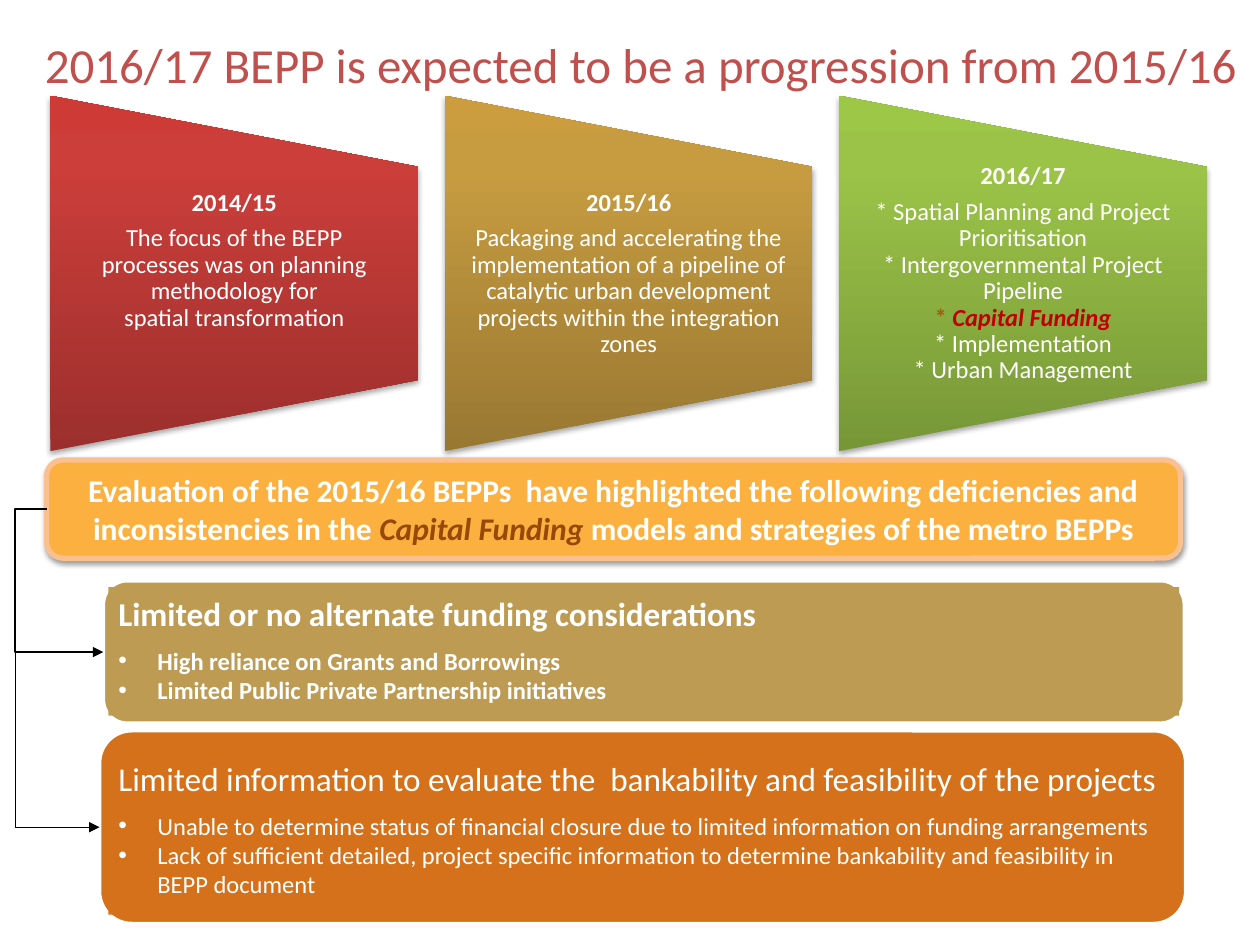
from lxml import etree
from pptx import Presentation
from pptx.dml import color
from pptx.enum import shapes, text
from pptx.oxml import ns
from pptx.util import Inches, Pt

WHITE = "FFFFFF"
HEADING = {"line_spacing": 0.9}
CARD = {"line_spacing": 0.9, "alignment": text.PP_ALIGN.CENTER}
CARD_LEFT, CARD_PITCH = 0.4, 3.13
SPINE = 0.12

CARDS = [
    (("9C2F2D", "CB3E3A", "CE3B37"), "2014/15",
     ["The focus of the BEPP\vprocesses was on planning methodology for\vspatial transformation"], 0.21),
    (("997832", "C79C41", "CB9D3F"), "2015/16",
     ["Packaging and accelerating the implementation of a pipeline of catalytic urban "
      "development projects within the integration zones"], 0),
    (("779737", "9BC348", "9DC746"), "2016/17",
     ["* Spatial Planning and Project Prioritisation",
      "* Intergovernmental Project Pipeline",
      [("* ", {"color": "A25C0A", "bold": True}),
       ("Capital Funding", {"color": "C00000", "bold": True, "italic": True})],
      "* Implementation",
      "* Urban Management"], 0),
]


def rgb(value):
    return color.RGBColor.from_string(value)


def set_values(target, values):
    for name, value in values.items():
        setattr(target, name, value)


def add_node(parent, tag, **attributes):
    return etree.SubElement(parent, ns.qn(tag), attributes)


def add_run(paragraph, words, size, color=WHITE, bold=False, italic=False):
    pieces = words.split("\v")
    for index, piece in enumerate(pieces):
        if index:
            paragraph.add_line_break()
        run = paragraph.add_run()
        run.text = piece
        set_values(run.font, {"name": "Calibri", "size": Pt(size), "bold": bold, "italic": italic})
        run.font.color.rgb = rgb(color)


def add_paragraph(frame, content, size, layout, bold=False):
    first = frame.paragraphs[0]
    paragraph = frame.add_paragraph() if first.runs else first
    set_values(paragraph, layout)
    runs = [(content, {"bold": bold})] if isinstance(content, str) else content
    for words, style in runs:
        add_run(paragraph, words, size, **style)
    return paragraph


def add_bullet(frame, words, bold):
    paragraph = add_paragraph(frame, words, 14, {"alignment": text.PP_ALIGN.LEFT}, bold)
    properties = paragraph._p.get_or_add_pPr()
    properties.set("marL", str(Inches(0.31)))
    properties.set("indent", str(Inches(-0.31)))
    add_node(properties, "a:buFont", typeface="Arial")
    add_node(properties, "a:buChar", char="•")


def format_frame(frame, left, top, right, bottom):
    set_values(frame, {
        "word_wrap": True, "auto_size": text.MSO_AUTO_SIZE.NONE,
        "vertical_anchor": text.MSO_ANCHOR.MIDDLE,
        "margin_left": Inches(left), "margin_top": Inches(top),
        "margin_right": Inches(right), "margin_bottom": Inches(bottom)})


def add_text_box(slide, box, insets):
    shape = slide.shapes.add_textbox(*map(Inches, box))
    format_frame(shape.text_frame, *insets)
    return shape


def add_shadow(shape, opacity, distance):
    effects = shape._element.spPr.find(ns.qn("a:effectLst"))
    shadow = add_node(effects, "a:outerShdw", blurRad=str(Pt(3.1)), dist=str(Pt(distance)),
                      dir="5400000", rotWithShape="0")
    add_node(add_node(shadow, "a:srgbClr", val="000000"), "a:alpha", val=str(opacity * 1000))


def add_rounded(slide, box, fill, line, width):
    shape = slide.shapes.add_shape(shapes.MSO_SHAPE.ROUNDED_RECTANGLE, *map(Inches, box))
    shape.shadow.inherit = False
    shape.fill.solid()
    shape.fill.fore_color.rgb = rgb(fill)
    shape.line.color.rgb = rgb(line)
    shape.line.width = Pt(width)
    return shape


def add_gradient(shape, colors):
    properties = shape._element.spPr
    gradient = etree.Element(ns.qn("a:gradFill"), rotWithShape="0")
    stops = add_node(gradient, "a:gsLst")
    for position, value in zip((0, 80, 100), colors):
        add_node(add_node(stops, "a:gs", pos=str(position * 1000)), "a:srgbClr", val=value)
    add_node(gradient, "a:lin", ang="16200000", scaled="0")
    properties.find(ns.qn("a:prstGeom")).addnext(gradient)


def add_card(slide, left, colors, year, lines, bottom):
    shape = slide.shapes.add_shape(
        shapes.MSO_SHAPE.FLOWCHART_MANUAL_OPERATION,
        Inches(left + 0.05), Inches(0.71), Inches(2.82), Inches(2.92))
    shape.rotation = 270
    shape.line.fill.background()
    shape.shadow.inherit = False
    add_gradient(shape, colors)
    add_shadow(shape, 35, 1.8)
    frame = add_text_box(slide, (left, 1.33, 2.92, 1.69), (0.1, 0, 0.1, bottom)).text_frame
    add_paragraph(frame, year, 14, {**CARD, "space_after": Pt(4.9)}, True)
    for line in lines:
        add_paragraph(frame, line, 14, CARD)


def add_title(slide, words):
    title = slide.shapes.title
    box = dict(zip(("left", "top", "width", "height"), map(Inches, (0.33, 0.25, 9.51, 0.51))))
    set_values(title, box)
    format_frame(title.text_frame, 0, 0, 0, 0)
    add_paragraph(title.text_frame, [(words, {"color": "C0504D"})], 28,
                  {"alignment": text.PP_ALIGN.CENTER})


def add_banner(slide):
    banner = add_rounded(slide, (0.37, 3.65, 9, 0.78), "FBB040", "FAC090", 3)
    add_shadow(banner, 38, 1.6)
    format_frame(banner.text_frame, 0.1, 0.05, 0.1, 0.05)
    add_paragraph(banner.text_frame, [
        ("Evaluation of the 2015/16 BEPPs  have highlighted the following deficiencies and "
         "inconsistencies in the ", {"bold": True}),
        ("Capital Funding ", {"color": "984807", "bold": True, "italic": True}),
        ("models and strategies of the metro BEPPs", {"bold": True}),
    ], 18, {"alignment": text.PP_ALIGN.CENTER})
    return banner


def add_finding(slide, box, text_box, fill, heading, bullets, bold):
    panel = add_rounded(slide, box, fill, WHITE, 2)
    label = add_text_box(slide, text_box, (0.08,) * 4)
    label.fill.solid()
    label.fill.fore_color.rgb = rgb(fill)
    add_paragraph(label.text_frame, heading, 19, {**HEADING, "space_after": Pt(6.65)}, bold)
    for bullet in bullets:
        add_bullet(label.text_frame, bullet, bold)
    return panel


def add_elbow(slide, source, target):
    connector = slide.shapes.add_connector(shapes.MSO_CONNECTOR.ELBOW, 0, 0, 0, 0)
    connector.begin_connect(source, 1)
    connector.end_connect(target, 1)
    connector.line.color.rgb = rgb("000000")
    connector.line.width = Pt(0.75)
    properties = connector._element.spPr
    ratio = (Inches(SPINE) - source.left) / (target.left - source.left)
    guides = properties.find(ns.qn("a:prstGeom")).find(ns.qn("a:avLst"))
    add_node(guides, "a:gd", name="adj1", fmla=f"val {round(ratio * 100000)}")
    add_node(properties.find(ns.qn("a:ln")), "a:tailEnd", type="triangle")
    add_node(properties, "a:effectLst")


def main():
    presentation = Presentation()
    presentation.slide_width, presentation.slide_height = Inches(10), Inches(7.5)
    slide = presentation.slides.add_slide(presentation.slide_layouts[5])
    for index, card in enumerate(CARDS):
        add_card(slide, CARD_LEFT + index * CARD_PITCH, *card)
    add_title(slide, "2016/17 BEPP is expected to be a progression from 2015/16")
    banner = add_banner(slide)
    funding = add_finding(
        slide, (0.82, 4.61, 8.58, 1.13), (0.86, 4.66, 8.5, 1.02), "BD9B53",
        "Limited or no alternate funding considerations",
        ["High reliance on Grants and Borrowings",
         "Limited Public Private Partnership initiatives"], True)
    bankability = add_finding(
        slide, (0.79, 5.8, 8.62, 1.53), (0.86, 5.93, 8.44, 1.33), "D4711A",
        "Limited information to evaluate the  bankability and feasibility of the projects",
        ["Unable to determine status of financial closure due to limited information on "
         "funding arrangements",
         "Lack of sufficient detailed, project specific information to determine bankability "
         "and feasibility in BEPP document"], False)
    for panel in (funding, bankability):
        add_elbow(slide, banner, panel)
    presentation.save("out.pptx")


if __name__ == "__main__":
    main()
